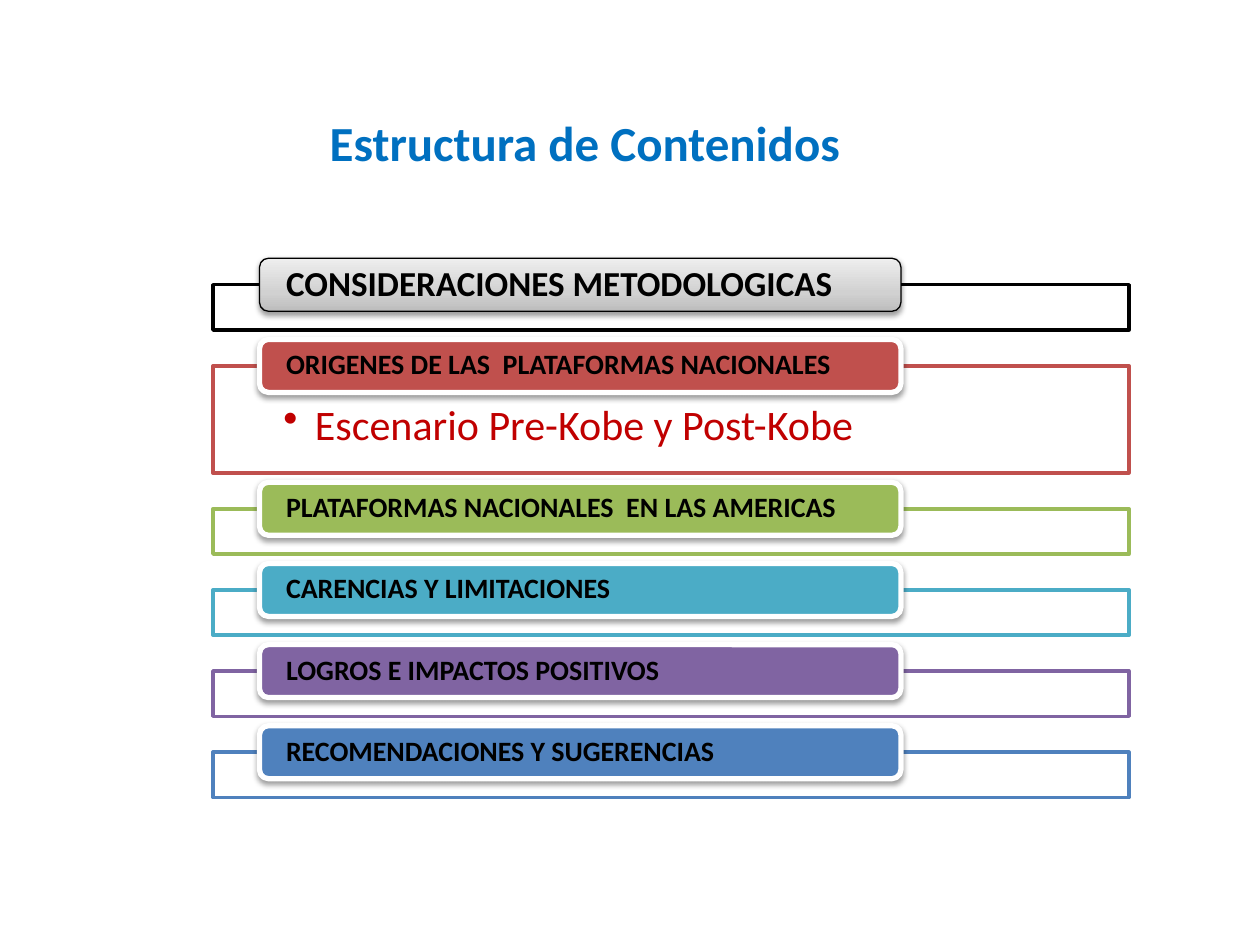
from copy import deepcopy

from lxml import etree
from pptx import Presentation
from pptx.dml.color import RGBColor
from pptx.enum.shapes import MSO_SHAPE
from pptx.enum.text import MSO_ANCHOR, MSO_AUTO_SIZE, PP_ALIGN
from pptx.oxml.ns import qn
from pptx.util import Inches, Pt

RECTANGLE = MSO_SHAPE.RECTANGLE
ROUNDED = MSO_SHAPE.ROUNDED_RECTANGLE
TOP, MIDDLE = MSO_ANCHOR.TOP, MSO_ANCHOR.MIDDLE
LEFT, CENTER = PP_ALIGN.LEFT, PP_ALIGN.CENTER
NO_AUTOFIT = MSO_AUTO_SIZE.NONE

BLACK = RGBColor(0x00, 0x00, 0x00)
WHITE = RGBColor(0xFF, 0xFF, 0xFF)
TITLE_BLUE = RGBColor(0x00, 0x70, 0xC0)
DARK_RED = RGBColor(0xC0, 0x00, 0x00)
RED = RGBColor(0xC0, 0x50, 0x4D)
GREEN = RGBColor(0x9B, 0xBB, 0x59)
TEAL = RGBColor(0x4B, 0xAC, 0xC6)
PURPLE = RGBColor(0x80, 0x64, 0xA2)
BLUE = RGBColor(0x4F, 0x81, 0xBD)
GRAY_STOPS = [
    (0, RGBColor(0xBD, 0xBD, 0xBD)),
    (0.35, RGBColor(0xD1, 0xD1, 0xD1)),
    (1, RGBColor(0xEE, 0xEE, 0xEE)),
]

# Heading, colour, bullet under the heading
SECTIONS = [
    ("CONSIDERACIONES METODOLOGICAS", BLACK, None),
    ("ORIGENES DE LAS  PLATAFORMAS NACIONALES", RED, "Escenario Pre-Kobe y Post-Kobe"),
    ("PLATAFORMAS NACIONALES  EN LAS AMERICAS", GREEN, None),
    ("CARENCIAS Y LIMITACIONES", TEAL, None),
    ("LOGROS E IMPACTOS POSITIVOS", PURPLE, None),
    ("RECOMENDACIONES Y SUGERENCIAS", BLUE, None),
]
LIST_TOP, LIST_BOTTOM = 2.26, 6.33
FRAME_HEIGHT, BULLET_FRAME_HEIGHT = 0.36, 0.85
TAB_RISE = 0.21


class SlideBuilder:
    font = "Calibri"

    def __init__(self, slide):
        self.slide = slide

    def set_text(self, shape, text, size, color, bold, align, anchor, insets):
        frame = shape.text_frame
        frame.text = text
        frame.word_wrap = True
        frame.auto_size = NO_AUTOFIT
        frame.vertical_anchor = anchor
        (frame.margin_left, frame.margin_top,
         frame.margin_right, frame.margin_bottom) = map(Inches, insets)
        paragraph = frame.paragraphs[0]
        paragraph.alignment = align
        font = paragraph.runs[0].font
        font.name, font.size, font.bold = self.font, Pt(size), bold
        font.color.rgb = color
        return paragraph

    def title(self, text, left, top, width, height):
        shape = self.slide.shapes.title
        shape.left, shape.top = Inches(left), Inches(top)
        shape.width, shape.height = Inches(width), Inches(height)
        self.set_text(shape, text, 28, TITLE_BLUE, True, CENTER, TOP,
                      (0.1, 0.05, 0.1, 0.05))

    def box(self, kind, left, top, width, height, fill, line, line_width):
        shape = self.slide.shapes.add_shape(
            kind, Inches(left), Inches(top), Inches(width), Inches(height))
        shape.shadow.inherit = False
        shape.fill.solid()
        shape.fill.fore_color.rgb = fill
        shape.line.color.rgb = line
        shape.line.width = Pt(line_width)
        return shape

    def frame(self, top, height, color, bullet):
        shape = self.box(RECTANGLE, 1.69, top, 7.27, height, WHITE, color, 2)
        if bullet:
            paragraph = self.set_text(shape, bullet, 24, DARK_RED, False, LEFT, TOP,
                                      (0.56, 0.3, 0.56, 0.19))
            paragraph.line_spacing = 0.9
            properties = paragraph._p.get_or_add_pPr()
            properties.set("marL", str(Inches(0.25)))
            properties.set("indent", str(Inches(-0.25)))
            etree.SubElement(properties, qn("a:buChar"), char="•")

    def tab(self, text, top, color, first):
        line, line_width, size = (BLACK, 0.75, 20) if first else (WHITE, 3, 16)
        shape = self.box(ROUNDED, 2.06, top, 5.09, 0.42, color, line, line_width)
        if first:
            self.gradient(shape, GRAY_STOPS)
        self.drop_shadow(shape)
        paragraph = self.set_text(shape, text, size, BLACK, True, LEFT, MIDDLE,
                                  (0.19, 0, 0.19, 0))
        paragraph.line_spacing = 0.9

    def gradient(self, shape, stops):
        shape.fill.gradient()
        shape.fill.gradient_angle = 90
        stop_list = shape.element.spPr.find(".//" + qn("a:gsLst"))
        stop_list.insert(1, deepcopy(stop_list[0]))
        for stop, (position, color) in zip(shape.fill.gradient_stops, stops):
            stop.position = position
            stop.color.rgb = color

    def drop_shadow(self, shape):
        effects = shape.element.spPr.find(qn("a:effectLst"))
        shadow = etree.SubElement(
            effects, qn("a:outerShdw"), blurRad=str(Pt(3.1)), dist=str(Pt(1.6)),
            dir="5400000", rotWithShape="0")
        color = etree.SubElement(shadow, qn("a:srgbClr"), val=str(BLACK))
        etree.SubElement(color, qn("a:alpha"), val="38000")


def main():
    presentation = Presentation()
    presentation.slide_width, presentation.slide_height = Inches(10), Inches(7.5)
    title_only = presentation.slide_layouts[5]
    builder = SlideBuilder(presentation.slides.add_slide(title_only))

    builder.title("Estructura de Contenidos ", 2.01, 0.84, 5.35, 0.57)

    # Frames share the list height with equal gaps; each tab overlaps its frame
    heights = [BULLET_FRAME_HEIGHT if bullet else FRAME_HEIGHT
               for _, _, bullet in SECTIONS]
    gap = (LIST_BOTTOM - LIST_TOP - sum(heights)) / (len(SECTIONS) - 1)
    top = LIST_TOP
    for index, (heading, color, bullet) in enumerate(SECTIONS):
        builder.frame(top, heights[index], color, bullet)
        builder.tab(heading, top - TAB_RISE, color, first=index == 0)
        top += heights[index] + gap

    presentation.save("out.pptx")


if __name__ == "__main__":
    main()
